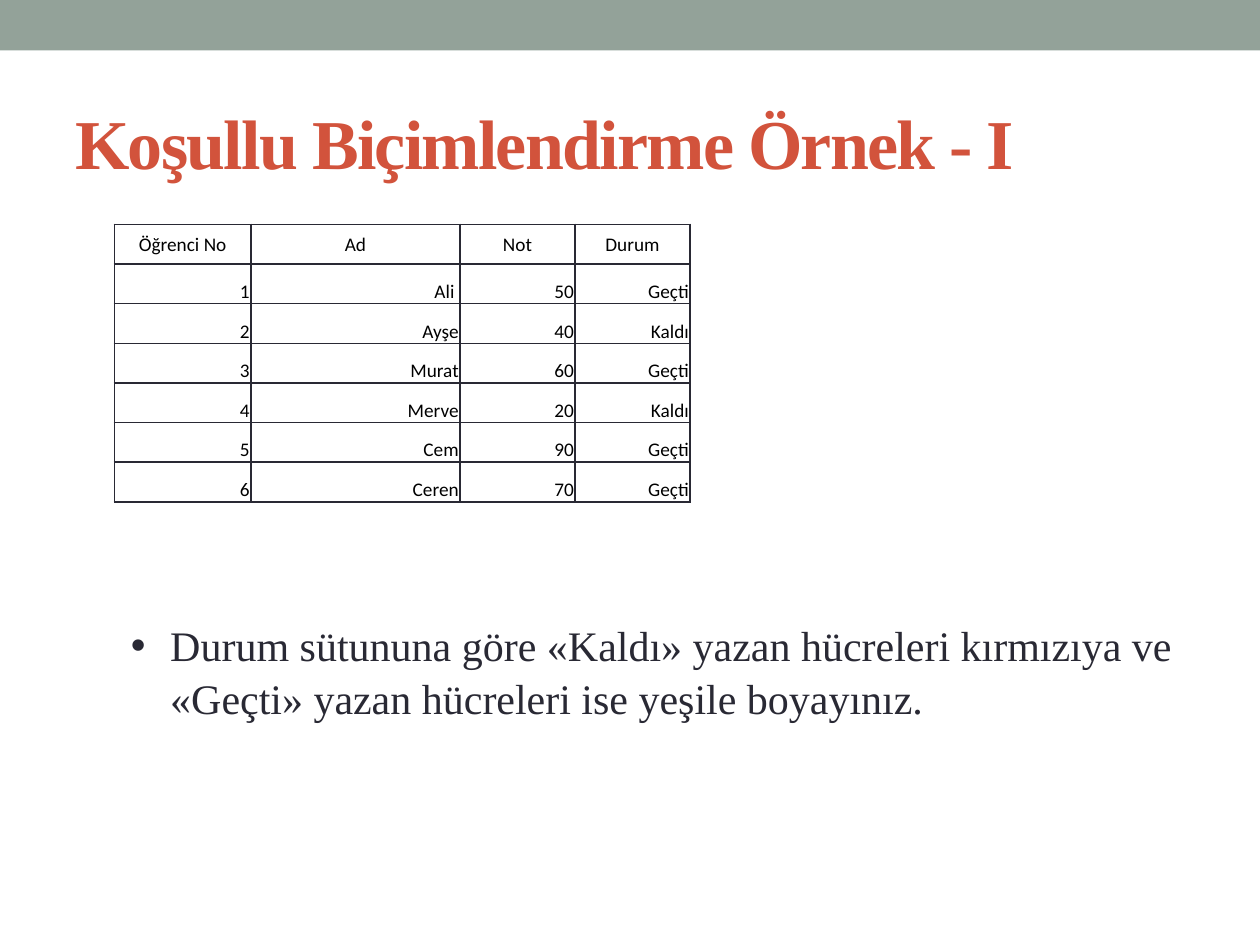
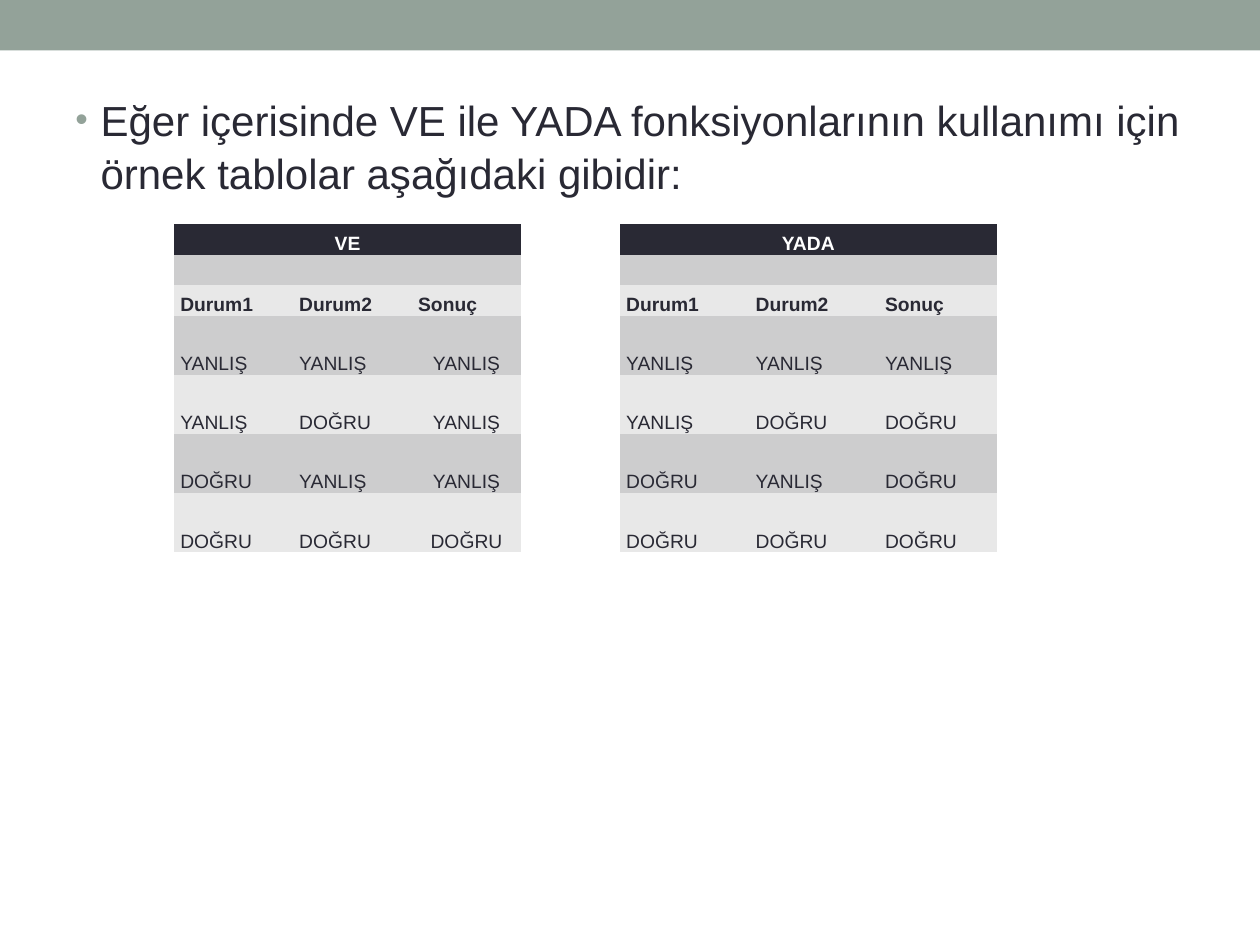
"""Build two slides on conditional formatting and the VE / YADA truth tables."""
from dataclasses import dataclass
from typing import Optional

from lxml import etree
from pptx import Presentation
from pptx.dml.color import RGBColor
from pptx.enum.shapes import MSO_SHAPE
from pptx.enum.text import MSO_ANCHOR, PP_ALIGN
from pptx.oxml.ns import qn
from pptx.util import Pt

RECT = MSO_SHAPE.RECTANGLE
MIDDLE, BOTTOM = MSO_ANCHOR.MIDDLE, MSO_ANCHOR.BOTTOM
LEFT, CENTER, RIGHT = PP_ALIGN.LEFT, PP_ALIGN.CENTER, PP_ALIGN.RIGHT

COLORS = {
    "band": "93A299",
    "title": "D2533C",
    "ink": "292934",
    "black": "000000",
    "white": "FFFFFF",
    "dark_row": "CDCDCE",
    "light_row": "E8E8E8",
}
SLIDE_W, SLIDE_H = 720, 540
TABLE_TOP = 128.2
CELL_SIZE = 11

GRADES = [
    ("Öğrenci No", "Ad", "Not", "Durum"),
    ("1", "Ali ", "50", "Geçti"),
    ("2", "Ayşe", "40", "Kaldı"),
    ("3", "Murat", "60", "Geçti"),
    ("4", "Merve", "20", "Kaldı"),
    ("5", "Cem", "90", "Geçti"),
    ("6", "Ceren", "70", "Geçti"),
]
F, T = "YANLIŞ", "DOĞRU"
INPUTS = [(F, F), (F, T), (T, F), (T, T)]


@dataclass(frozen=True)
class Style:
    font: str
    size: float
    color: str
    bold: bool = False


@dataclass(frozen=True)
class Bullet:
    indent: float
    color: Optional[str] = None
    percent: int = 100


@dataclass(frozen=True)
class TruthTable:
    name: str
    left: float
    cols: tuple
    results: tuple
    result_align: PP_ALIGN


TRUTH_TABLES = [
    TruthTable("VE", 99.4, (68, 68, 62.5), (F, F, F, T), CENTER),
    TruthTable("YADA", 354.2, (74, 74, 67.5), (F, T, T, T), LEFT),
]


def rgb(name: str) -> RGBColor:
    return RGBColor.from_string(COLORS[name])


def style_runs(p, style: Style) -> None:
    for r in p.runs:
        r.font.name = style.font
        r.font.size = Pt(style.size)
        r.font.bold = style.bold
        r.font.color.rgb = rgb(style.color)


def add_slide(prs):
    slide = prs.slides.add_slide(prs.slide_layouts[6])
    band = slide.shapes.add_shape(RECT, 0, 0, Pt(SLIDE_W), Pt(28.8))
    band.shadow.inherit = False
    band.fill.solid()
    band.fill.fore_color.rgb = rgb("band")
    band.line.fill.background()
    return slide


def add_text(slide, text: str, box: tuple, style: Style):
    sp = slide.shapes.add_textbox(*map(Pt, box))
    tf = sp.text_frame
    tf.word_wrap = True
    tf.text = text
    style_runs(tf.paragraphs[0], style)
    return tf


def add_title(slide, text: str) -> None:
    style = Style("Times New Roman", 40, "title", True)
    tf = add_text(slide, text, (36, 41.8, 648, 77.8), style)
    tf.vertical_anchor = MIDDLE
    tf.paragraphs[0].runs[0].font._element.set("spc", "-100")


def add_bullet_text(slide, text: str, box: tuple, style: Style, bullet: Bullet) -> None:
    p = add_text(slide, text, box, style).paragraphs[0]
    p.line_spacing = 1.05
    pPr = p._p.get_or_add_pPr()
    pPr.set("marL", str(Pt(bullet.indent)))
    pPr.set("indent", str(-Pt(bullet.indent)))
    if bullet.color:
        clr = etree.SubElement(pPr, qn("a:buClr"))
        etree.SubElement(clr, qn("a:srgbClr"), val=COLORS[bullet.color])
    etree.SubElement(pPr, qn("a:buSzPct"), val=str(bullet.percent * 1000))
    etree.SubElement(pPr, qn("a:buFont"), typeface="Arial")
    etree.SubElement(pPr, qn("a:buChar"), char="•")


def set_borders(cell, color: Optional[str]) -> None:
    tcPr = cell._tc.get_or_add_tcPr()
    for i, side in enumerate(("lnL", "lnR", "lnT", "lnB")):
        ln = etree.Element(qn(f"a:{side}"), w=str(Pt(1)))
        if color:
            fill = etree.SubElement(ln, qn("a:solidFill"))
            etree.SubElement(fill, qn("a:srgbClr"), val=COLORS[color])
        else:
            etree.SubElement(ln, qn("a:noFill"))
        tcPr.insert(i, ln)


def add_table(slide, left: float, cols: tuple, rows: list):
    frame = slide.shapes.add_table(
        len(rows), len(cols), Pt(left), Pt(TABLE_TOP), Pt(sum(cols)), Pt(sum(rows)))
    table = frame.table
    table.first_row = table.horz_banding = False
    for col, width in zip(table.columns, cols):
        col.width = Pt(width)
    for row, height in zip(table.rows, rows):
        row.height = Pt(height)
    return table


def fill_cell(cell, text: str, style: Style, align: PP_ALIGN, anchor: MSO_ANCHOR,
              margins: tuple, fill: Optional[str] = None,
              border: Optional[str] = None, spacing: float = 1.0) -> None:
    side, top = margins
    cell.margin_left = cell.margin_right = Pt(side)
    cell.margin_top, cell.margin_bottom = Pt(top), 0
    cell.vertical_anchor = anchor
    p = cell.text_frame.paragraphs[0]
    p.alignment = align
    p.line_spacing = spacing
    if text:
        p.text = text
        style_runs(p, style)
    else:
        etree.SubElement(p._p, qn("a:endParaRPr"), sz=str(style.size * 100))
    if fill:
        cell.fill.solid()
        cell.fill.fore_color.rgb = rgb(fill)
    else:
        cell.fill.background()
    set_borders(cell, border)


def add_grades(slide) -> None:
    style = Style("Calibri", CELL_SIZE, "black")
    table = add_table(slide, 65.4, (78, 119.5, 65.75, 65.75), [22.65] * len(GRADES))
    for i, record in enumerate(GRADES):
        align, anchor = (RIGHT, BOTTOM) if i else (CENTER, MIDDLE)
        for j, text in enumerate(record):
            fill_cell(table.cell(i, j), text, style, align, anchor,
                      (0.7, 0.7), border="ink")


def add_truth_table(slide, truth: TruthTable) -> None:
    data = [(truth.name, "", ""), ("", "", ""), ("Durum1", "Durum2", "Sonuç")]
    data += [(*pair, result) for pair, result in zip(INPUTS, truth.results)]
    table = add_table(slide, truth.left, truth.cols, [17.4] * 3 + [33.8] * 4)
    for i, record in enumerate(data):
        style = Style("Arial", CELL_SIZE, "ink" if i else "white", i < 3)
        fill = ("dark_row" if i % 2 else "light_row") if i else "ink"
        for j, text in enumerate(record):
            align = LEFT
            if i == 0:
                align = CENTER
            elif i > 2 and j == 2:
                align = truth.result_align
            fill_cell(table.cell(i, j), text, style, align, BOTTOM,
                      (3.6, 0), fill, spacing=1.15)
    table.cell(0, 0).merge(table.cell(0, 2))


def main() -> None:
    prs = Presentation()
    prs.slide_width, prs.slide_height = Pt(SLIDE_W), Pt(SLIDE_H)

    slide = add_slide(prs)
    add_title(slide, "Koşullu Biçimlendirme Örnek - I")
    add_grades(slide)
    add_bullet_text(
        slide,
        "Durum sütununa göre «Kaldı» yazan hücreleri kırmızıya ve "
        "«Geçti» yazan hücreleri ise yeşile boyayınız.",
        (67.7, 349.2, 612, 65.5), Style("Times New Roman", 24, "ink"), Bullet(22.5))

    slide = add_slide(prs)
    add_bullet_text(
        slide,
        "Eğer içerisinde VE ile YADA fonksiyonlarının kullanımı için "
        "örnek tablolar aşağıdaki gibidir:",
        (36, 49, 648, 460.8), Style("Arial", 24, "ink"), Bullet(14.4, "band", 85))
    for truth in TRUTH_TABLES:
        add_truth_table(slide, truth)

    prs.save("out.pptx")


if __name__ == "__main__":
    main()
